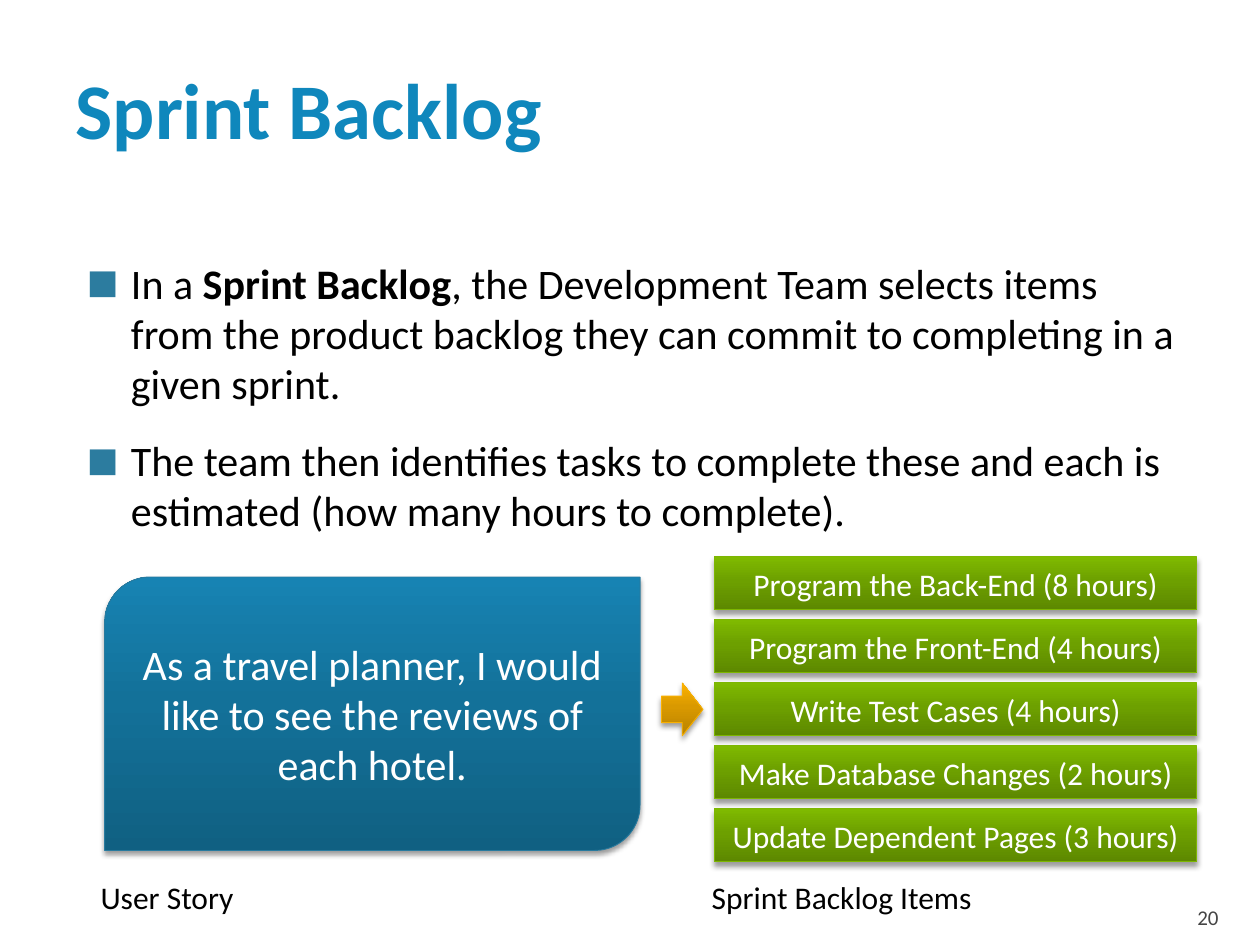
import pptx
import pptx.util
import pptx.dml.color
import pptx.enum.shapes
import pptx.enum.text
import pptx.oxml
import pptx.oxml.ns

In, Pt = pptx.util.Inches, pptx.util.Pt
KIND = pptx.enum.shapes.MSO_SHAPE
ALIGN = pptx.enum.text.PP_ALIGN
ANCHOR = pptx.enum.text.MSO_ANCHOR
FIT = pptx.enum.text.MSO_AUTO_SIZE
NS = pptx.oxml.ns.nsdecls("a")

BLUE = ("106082", "137199", "1783B3", "287A9E")
GREEN = ("5D8800", "6DA000", "7FBA00", "7DB602")
GOLD = ("B88200", "D99900", "FDB200", "F9B000")

POINTS = [
    [("In a ", False), ("Sprint Backlog", True),
     (", the Development Team selects items from the product backlog they can "
      "commit to completing in a given sprint.", False)],
    [("The team then identifies tasks to complete these and each is estimated "
      "(how many hours to complete).", False)],
]
STORY = "As a travel planner, I would like to see the reviews of each hotel."
TASKS = [
    "Program the Back-End (8 hours)",
    "Program the Front-End (4 hours)",
    "Write Test Cases (4 hours)",
    "Make Database Changes (2 hours)",
    "Update Dependent Pages (3 hours)",
]


def color(code):
    return pptx.dml.color.RGBColor.from_string(code)


def style(run, size, code, bold=False):
    font = run.font
    font.name, font.size, font.bold = "Calibri", Pt(size), bold
    font.color.rgb = color(code)


def inset(frame, left, top, right, bottom):
    frame.margin_left, frame.margin_top = In(left), In(top)
    frame.margin_right, frame.margin_bottom = In(right), In(bottom)


def write(frame, text, size, code, align=ALIGN.LEFT, bold=False):
    frame.text = text
    par = frame.paragraphs[0]
    par.alignment = align
    style(par.runs[0], size, code, bold)


def label(slide, box, text, size=18, code="000000", align=ALIGN.LEFT):
    frame = slide.shapes.add_textbox(*map(In, box)).text_frame
    frame.word_wrap = False
    write(frame, text, size, code, align)
    return frame


def block(slide, kind, box, tones, text="", size=18):
    """Add a glossy shape: dark at its foot, light at its head, soft shadow."""
    shape = slide.shapes.add_shape(kind, *map(In, box))
    shape.fill.solid()
    shape.line.color.rgb = color(tones[3])
    shape.line.width = Pt(0.5)
    shape.shadow.inherit = False
    props = shape.element.spPr
    stops = "".join(f'<a:gs pos="{pos}000"><a:srgbClr val="{tone}"/></a:gs>'
                    for pos, tone in zip((0, 55, 100), tones))
    solid = props.find(pptx.oxml.ns.qn("a:solidFill"))
    props.replace(solid, pptx.oxml.parse_xml(
        f'<a:gradFill {NS} rotWithShape="1"><a:gsLst>{stops}</a:gsLst>'
        '<a:lin ang="16200000" scaled="0"/></a:gradFill>'))
    props.find(pptx.oxml.ns.qn("a:effectLst")).append(pptx.oxml.parse_xml(
        f'<a:outerShdw {NS} blurRad="{Pt(3.1)}" dist="{Pt(2)}" dir="5400000" '
        'rotWithShape="0"><a:srgbClr val="000000"><a:alpha val="38000"/>'
        '</a:srgbClr></a:outerShdw>'))
    if text:
        frame = shape.text_frame
        frame.word_wrap = True
        frame.vertical_anchor = ANCHOR.MIDDLE
        write(frame, text, size, "FFFFFF", ALIGN.CENTER)


def bullet(par):
    props = par._p.get_or_add_pPr()
    props.set("marL", str(In(0.48)))
    props.set("indent", str(In(-0.35)))
    for part in (f'<a:buClr {NS}><a:srgbClr val="2C7C9F"/></a:buClr>',
                 f'<a:buSzPct {NS} val="80000"/>',
                 f'<a:buFont {NS} typeface="Calibri"/>',
                 f'<a:buChar {NS} char="■"/>'):
        props.append(pptx.oxml.parse_xml(part))


def head(slide, box, text):
    title = slide.shapes.title
    title.left, title.top, title.width, title.height = map(In, box)
    frame = title.text_frame
    frame.vertical_anchor = ANCHOR.MIDDLE
    frame.auto_size = FIT.NONE
    inset(frame, 0.1, 0.05, 0.05, 0.05)
    write(frame, text, 45, "0F87BC", bold=True)


def body(slide, box, points):
    frame = slide.shapes.add_textbox(*map(In, box)).text_frame
    frame.word_wrap = True
    inset(frame, 0.06, 0.1, 0.1, 0.05)
    for i, point in enumerate(points):
        par = frame.add_paragraph() if i else frame.paragraphs[0]
        par.space_before = Pt(15)
        bullet(par)
        for text, bold in point:
            run = par.add_run()
            run.text = text
            style(run, 24, "000000", bold)


def stack(slide, box, tasks, gap=0.08):
    """Spread one bar per task evenly down the box."""
    left, top, width, height = box
    step = (height + gap) / len(tasks)
    for i, task in enumerate(tasks):
        block(slide, KIND.RECTANGLE, (left, top + i * step, width, step - gap),
              GREEN, task)


def flow(slide, box):
    """Show the story on the left, an arrow, and its tasks on the right."""
    left, top, width, height = box
    right = left + width
    bar = 3.83
    block(slide, KIND.ROUND_2_DIAG_RECTANGLE,
          (left, top + 0.16, 4.25, 2.17), BLUE, STORY, 24)
    stack(slide, (right - bar, top, bar, height), TASKS)
    block(slide, KIND.RIGHT_ARROW,
          (left + 4.42, top + (height - 0.42) / 2, 0.33, 0.42), GOLD)
    foot = top + height + 0.08
    label(slide, (left - 0.13, foot, 1.3, 0.4), "User Story")
    label(slide, (right - bar - 0.12, foot, 2.36, 0.4), "Sprint Backlog Items")


def number(slide, box, text):
    frame = label(slide, box, text, 12, "454545", ALIGN.RIGHT)
    frame.word_wrap = True
    frame.vertical_anchor = ANCHOR.BOTTOM
    inset(frame, 0.1, 0.05, 0.1, 0)


def main():
    deck = pptx.Presentation()
    deck.slide_width, deck.slide_height = In(10), In(7.5)
    slide = deck.slides.add_slide(deck.slide_layouts[5])
    head(slide, (0.5, 0.17, 9, 1.37), "Sprint Backlog")
    body(slide, (0.5, 1.94, 9, 5.06), POINTS)
    number(slide, (8.97, 7.08, 0.8, 0.3), "20")
    flow(slide, (0.83, 4.42, 8.67, 2.42))
    deck.save("out.pptx")


if __name__ == "__main__":
    main()
